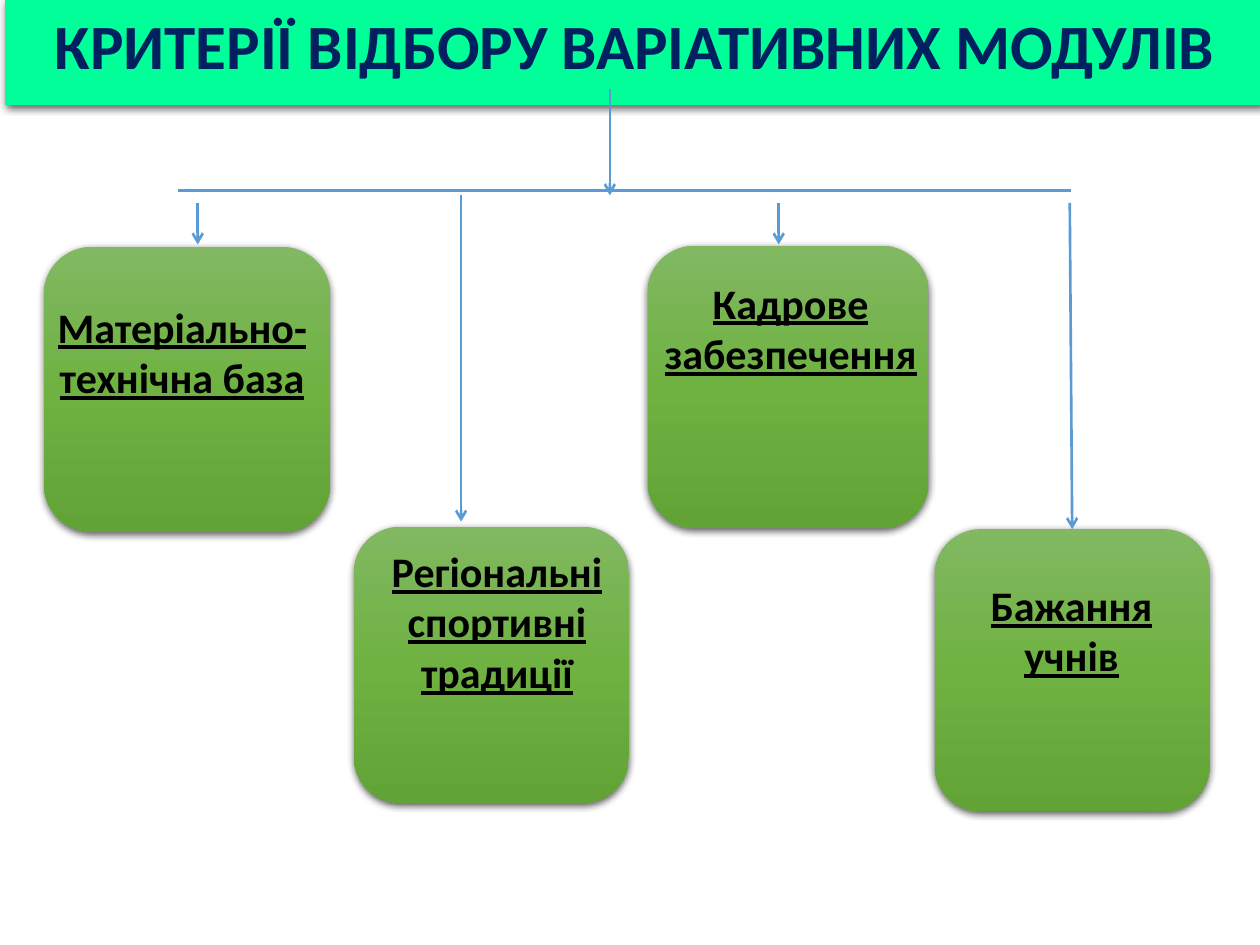
import copy

import lxml.etree
import pptx
import pptx.dml.color
import pptx.enum.shapes
import pptx.enum.text
import pptx.oxml.ns
import pptx.util

Pt = pptx.util.Pt
RGBColor = pptx.dml.color.RGBColor
qn = pptx.oxml.ns.qn

BANNER_GREEN = RGBColor(0x00, 0xFF, 0x99)
NAVY = RGBColor(0x00, 0x20, 0x60)
BLACK = RGBColor(0x00, 0x00, 0x00)
ARROW_BLUE = RGBColor(0x5B, 0x9B, 0xD5)
CARD_STOPS = [
    (0, RGBColor(0x81, 0xB8, 0x61)),
    (0.5, RGBColor(0x6F, 0xB2, 0x42)),
    (1, RGBColor(0x62, 0xA3, 0x36)),
]

HEADING_FONT = {"name": "Calibri", "size": Pt(36), "bold": True}
CRITERION_FONT = {"name": "Calibri", "size": Pt(24), "bold": True, "underline": True}

CRITERIA = [
    ("Матеріально-технічна база", (25.2, 141.1, 163.4, 162.7), (25.2, 168.5, 157.7, 65.5)),
    ("Регіональні спортивні традиції", (202.3, 301, 157, 157.7), (202.3, 308.2, 163.4, 94.3)),
    ("Кадрове забезпечення", (370.1, 140.4, 160.6, 161.3), (370.1, 154.8, 163.4, 65.5)),
    ("Бажання учнів", (534.2, 302.4, 157, 161.3), (530.6, 327.6, 163.4, 65.5)),
]
BRANCH_LINE = (101.5, 108.7, 612, 108.7)
ARROWS = [
    (348.5, 51.1, 348.5, 111.6),
    (113, 115.9, 113, 139.7),
    (263.5, 111.6, 263.5, 298.1),
    (445, 115.9, 445, 139.7),
]
WISHES_ARROW = (611.3, 115.9, 612.7, 302.4)


def add_shadow(shape):
    shape.shadow.inherit = False
    effects = shape.element.spPr.find(qn("a:effectLst"))
    outer = lxml.etree.SubElement(
        effects, qn("a:outerShdw"), blurRad=str(Pt(4.5)), dist=str(Pt(1.5)),
        dir="5400000", algn="ctr", rotWithShape="0")
    black = lxml.etree.SubElement(outer, qn("a:srgbClr"), val=str(BLACK))
    lxml.etree.SubElement(black, qn("a:alpha"), val="63000")


def write_text(shape, wording, font_values, color, anchor):
    frame = shape.text_frame
    frame.text = wording
    frame_values = {
        "word_wrap": True,
        "auto_size": pptx.enum.text.MSO_AUTO_SIZE.SHAPE_TO_FIT_TEXT,
        "vertical_anchor": anchor,
    }
    for key, value in frame_values.items():
        setattr(frame, key, value)
    paragraph = frame.paragraphs[0]
    paragraph.alignment = pptx.enum.text.PP_ALIGN.CENTER
    font = paragraph.runs[0].font
    for key, value in font_values.items():
        setattr(font, key, value)
    font.color.rgb = color


def place_heading(slide, box):
    heading = slide.shapes.title
    for side, length in zip(("left", "top", "width", "height"), box):
        setattr(heading, side, Pt(length))
    heading.fill.solid()
    heading.fill.fore_color.rgb = BANNER_GREEN
    add_shadow(heading)
    write_text(heading, "КРИТЕРІЇ ВІДБОРУ ВАРІАТИВНИХ МОДУЛІВ", HEADING_FONT, NAVY,
               pptx.enum.text.MSO_ANCHOR.TOP)


def place_card(slide, box):
    card = slide.shapes.add_shape(
        pptx.enum.shapes.MSO_SHAPE.ROUNDED_RECTANGLE, *map(Pt, box))
    card.fill.gradient()
    card.fill.gradient_angle = 270
    stop_list = card.element.spPr.find(qn("a:gradFill")).find(qn("a:gsLst"))
    stop_list.append(copy.deepcopy(stop_list[0]))
    for stop, (position, color) in zip(card.fill.gradient_stops, CARD_STOPS):
        stop.position = position
        stop.color.rgb = color
    card.line.fill.background()
    add_shadow(card)
    return card


def place_criterion(slide, wording, box):
    criterion = slide.shapes.add_textbox(*map(Pt, box))
    write_text(criterion, wording, CRITERION_FONT, BLACK, pptx.enum.text.MSO_ANCHOR.TOP)


def place_line(slide, ends, arrow=True):
    connector = slide.shapes.add_connector(
        pptx.enum.shapes.MSO_CONNECTOR.STRAIGHT, *map(Pt, ends))
    connector.line.color.rgb = ARROW_BLUE
    connector.line.width = Pt(1.5)
    properties = connector.element.spPr
    if arrow:
        lxml.etree.SubElement(properties.find(qn("a:ln")), qn("a:tailEnd"), type="arrow")
    lxml.etree.SubElement(properties, qn("a:effectLst"))
    return connector


def main():
    presentation = pptx.Presentation()
    presentation.slide_width = Pt(720)
    presentation.slide_height = Pt(540)
    slide = presentation.slides.add_slide(presentation.slide_layouts[5])

    place_heading(slide, (2.9, 0, 720, 51.1))
    cards = [place_card(slide, card_box) for _, card_box, _ in CRITERIA]
    for wording, _, text_box in CRITERIA:
        place_criterion(slide, wording, text_box)
    place_line(slide, BRANCH_LINE, arrow=False)
    for ends in ARROWS:
        place_line(slide, ends)
    place_line(slide, WISHES_ARROW).end_connect(cards[-1], 0)

    presentation.save("out.pptx")


if __name__ == "__main__":
    main()
